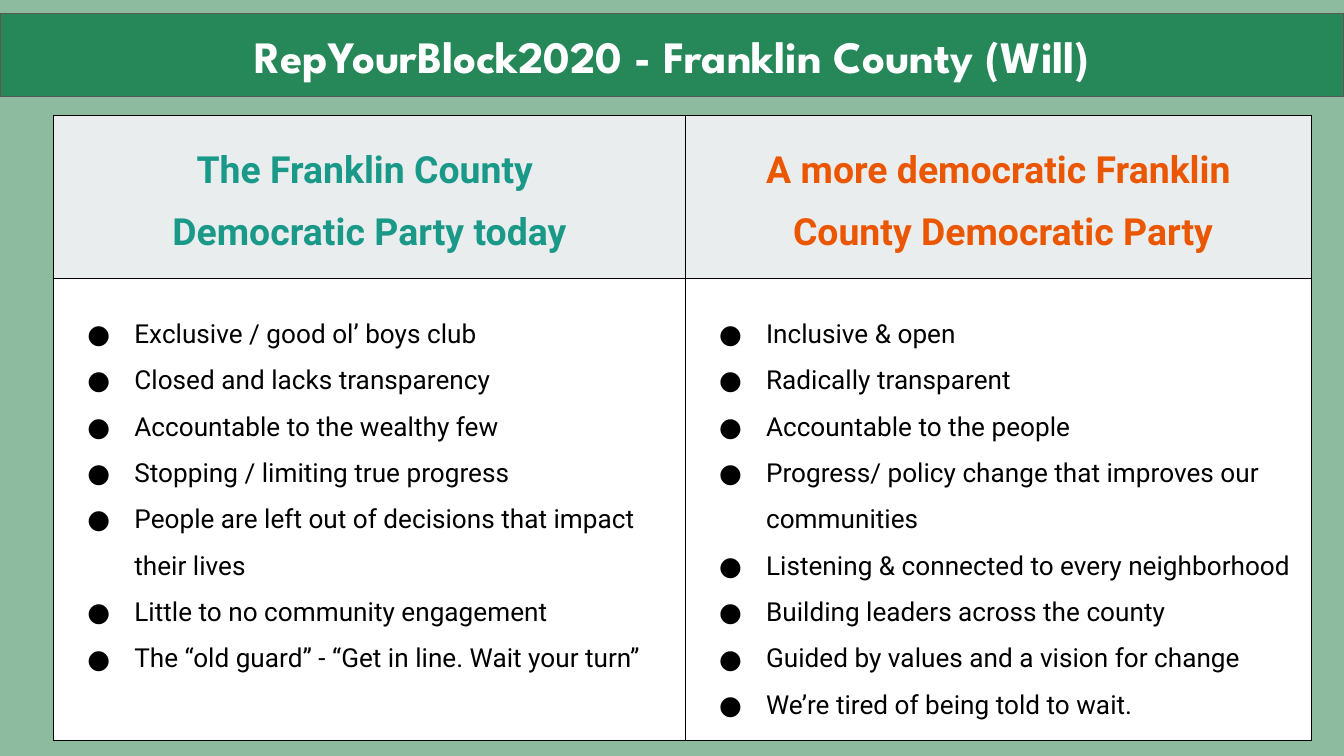
from lxml import etree
from pptx import Presentation
from pptx.dml.color import RGBColor
from pptx.enum.shapes import MSO_SHAPE
from pptx.enum.text import MSO_ANCHOR, PP_ALIGN
from pptx.oxml.ns import qn
from pptx.util import Inches, Pt

RECTANGLE = MSO_SHAPE.RECTANGLE
MIDDLE, TOP = MSO_ANCHOR.MIDDLE, MSO_ANCHOR.TOP
CENTER, LEFT = PP_ALIGN.CENTER, PP_ALIGN.LEFT

TITLE = "RepYourBlock2020 - Franklin County (Will)"
COLUMNS = [
    {
        "heading": ["The Franklin County ", "Democratic Party today"],
        "color": "1A9988",
        "width": 4.7,
        "points": [
            "Exclusive / good ol’ boys club",
            "Closed and lacks transparency",
            "Accountable to the wealthy few",
            "Stopping / limiting true progress",
            "People are left out of decisions that impact their lives",
            "Little to no community engagement",
            "The “old guard” - “Get in line. Wait your turn”",
        ],
    },
    {
        "heading": ["A more democratic Franklin", " County Democratic Party"],
        "color": "EB5600",
        "width": 4.66,
        "points": [
            "Inclusive & open",
            "Radically transparent",
            "Accountable to the people",
            "Progress/ policy change that improves our communities",
            "Listening & connected to every neighborhood",
            "Building leaders across the county",
            "Guided by values and a vision for change",
            "We’re tired of being told to wait.",
        ],
    },
]
ROW_HEIGHTS = [1.21, 3.41]
WIDTH = 10
HEIGHT = WIDTH * 9 / 16
MARGIN = 0.1


def paint(fill, color):
    """Give a fill one solid colour."""
    fill.solid()
    fill.fore_color.rgb = RGBColor.from_string(color)


def add_run(paragraph, text, size, font, color, bold=False):
    """Add one formatted run to a paragraph."""
    run = paragraph.add_run()
    run.text = text
    run.font.size = Pt(size)
    run.font.name = font
    run.font.bold = bold
    run.font.color.rgb = RGBColor.from_string(color)


def add_bullet(paragraph):
    """Give a paragraph a hanging round black bullet."""
    properties = paragraph._p.get_or_add_pPr()
    properties.set("marL", str(Inches(0.5)))
    properties.set("indent", str(Inches(-0.35)))
    color = etree.SubElement(properties, qn("a:buClr"))
    etree.SubElement(color, qn("a:srgbClr"), val="000000")
    etree.SubElement(properties, qn("a:buFont"), typeface="Roboto")
    etree.SubElement(properties, qn("a:buChar"), char="●")


def style_cell(cell, fill, top):
    """Set the margins, fill and thin black borders of a cell."""
    cell.margin_left = cell.margin_right = cell.margin_bottom = Inches(MARGIN)
    cell.margin_top = Inches(top)
    cell.vertical_anchor = TOP
    paint(cell.fill, fill)
    properties = cell._tc.get_or_add_tcPr()
    for position, side in enumerate(("a:lnL", "a:lnR", "a:lnT", "a:lnB")):
        line = etree.Element(qn(side), w=str(Pt(0.75)))
        solid = etree.SubElement(line, qn("a:solidFill"))
        etree.SubElement(solid, qn("a:srgbClr"), val="000000")
        properties.insert(position, line)


def fill_cell(cell, lines, size, color, heading):
    """Write heading lines or bullet points into a cell."""
    frame = cell.text_frame
    for number, text in enumerate(lines):
        paragraph = frame.add_paragraph() if number else frame.paragraphs[0]
        paragraph.alignment = CENTER if heading else LEFT
        if heading:
            paragraph.space_before = Pt(9.5 if number else 0)
        else:
            paragraph.line_spacing = 1.5
            add_bullet(paragraph)
        add_run(paragraph, text, size, "Roboto", color, heading)


def add_title(slide):
    """Draw the banner and its title."""
    banner = slide.shapes.add_shape(
        RECTANGLE, 0, Inches(0.1), Inches(WIDTH), Inches(0.62))
    banner.shadow.inherit = False
    paint(banner.fill, "268758")
    paint(banner.line.fill, "595959")
    banner.line.width = Pt(0.75)

    title = slide.shapes.add_textbox(
        Inches(0.9), Inches(0.17), Inches(8.2), Inches(0.49))
    frame = title.text_frame
    frame.word_wrap = True
    frame.vertical_anchor = MIDDLE
    frame.margin_left = frame.margin_right = Inches(MARGIN)
    frame.margin_top = frame.margin_bottom = Inches(MARGIN)
    paragraph = frame.paragraphs[0]
    paragraph.alignment = CENTER
    add_run(paragraph, TITLE, 24, "League Spartan", "FFFFFF", True)


def add_comparison(slide):
    """Draw the two-column comparison table."""
    total_width = sum(column["width"] for column in COLUMNS)
    table = slide.shapes.add_table(
        len(ROW_HEIGHTS), len(COLUMNS), Inches(0.4), Inches(0.86),
        Inches(total_width), Inches(sum(ROW_HEIGHTS))).table
    for row, height in zip(table.rows, ROW_HEIGHTS):
        row.height = Inches(height)
    for index, column in enumerate(COLUMNS):
        table.columns[index].width = Inches(column["width"])
        heading, body = table.cell(0, index), table.cell(1, index)
        style_cell(heading, "E9EDEE", 0.25)
        style_cell(body, "FFFFFF", 0.19)
        fill_cell(heading, column["heading"], 20, column["color"], True)
        fill_cell(body, column["points"], 14, "000000", False)


def main():
    """Build and save the slide."""
    presentation = Presentation()
    presentation.slide_width = Inches(WIDTH)
    presentation.slide_height = Inches(HEIGHT)
    slide = presentation.slides.add_slide(presentation.slide_layouts[6])
    paint(slide.background.fill, "8CBBA0")
    add_title(slide)
    add_comparison(slide)
    presentation.save("out.pptx")


if __name__ == "__main__":
    main()
